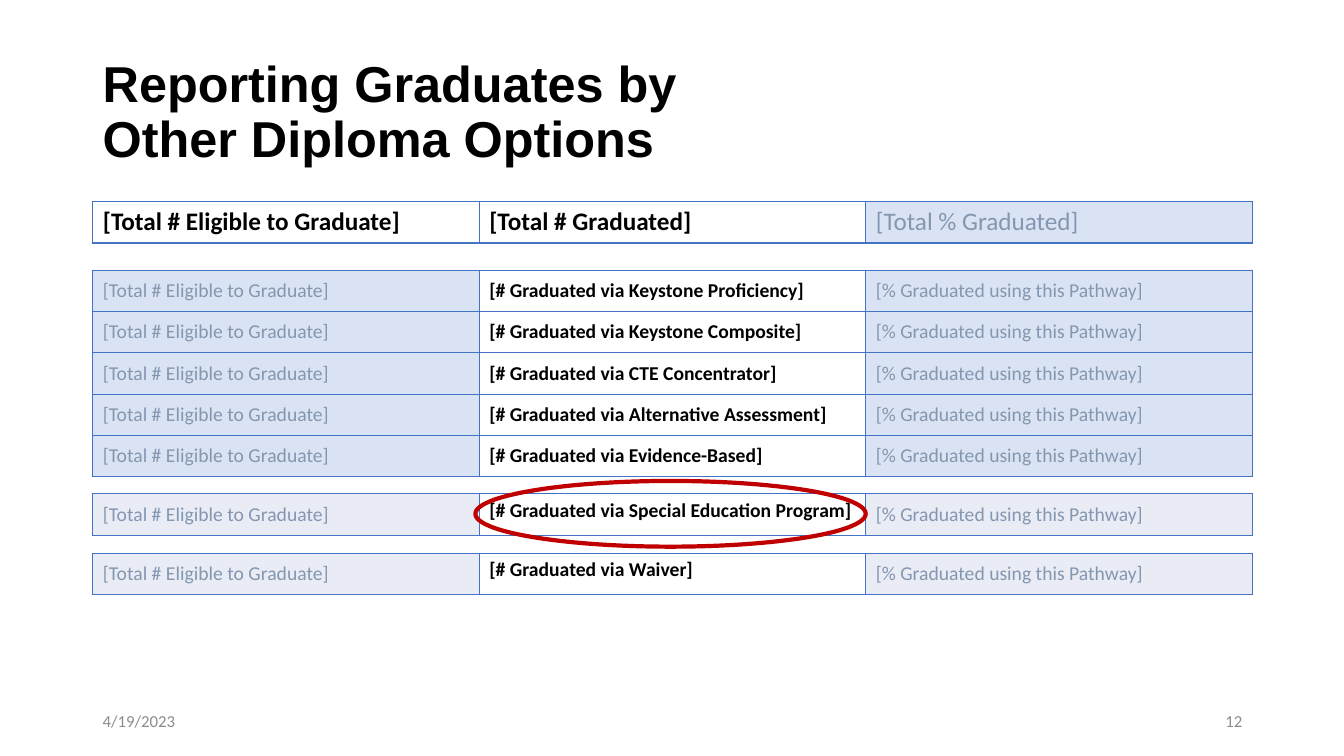
from lxml.etree import SubElement
from pptx import Presentation
from pptx.dml.color import RGBColor
from pptx.enum.shapes import MSO_SHAPE as Shape
from pptx.enum.text import MSO_ANCHOR as Anchor, PP_ALIGN as Align
from pptx.oxml.ns import qn
from pptx.util import Inches, Pt

BLACK = RGBColor(0x00, 0x00, 0x00)
WHITE = RGBColor(0xFF, 0xFF, 0xFF)
MUTED = RGBColor(0x84, 0x97, 0xB0)
FOOTER_GRAY = RGBColor(0x8C, 0x8C, 0x8C)
BORDER_BLUE = RGBColor(0x44, 0x72, 0xC4)
PALE_BLUE = RGBColor(0xDA, 0xE3, 0xF3)
PALE_GRAY = RGBColor(0xE9, 0xEB, 0xF5)
RED = RGBColor(0xC0, 0x00, 0x00)

ELIGIBLE = "[Total # Eligible to Graduate]"
PATHWAY_SHARE = "[% Graduated using this Pathway]"


class GridPage:
    """Places elements by columns and rows, counted from the first table's corner."""

    left, top = 0.92, 2.0
    column, row = 11.5 / 3, 0.41

    def __init__(self, deck):
        self.page = deck.slides.add_slide(deck.slide_layouts[6])

    def area(self, column, row, columns, rows):
        return (Inches(self.left + column * self.column),
                Inches(self.top + row * self.row),
                Inches(columns * self.column), Inches(rows * self.row))

    def fill_para(self, para, text, color, size, name="Calibri", bold=False):
        para.text = text
        style = {"name": name, "size": Pt(size), "bold": bold}
        for span in para.runs:
            for key, value in style.items():
                setattr(span.font, key, value)
            span.font.color.rgb = color

    def text(self, place, text, color, size, align=Align.LEFT, spacing=1.0, **style):
        frame = self.page.shapes.add_textbox(*self.area(*place)).text_frame
        frame.word_wrap = True
        frame.vertical_anchor = Anchor.MIDDLE
        para = frame.paragraphs[0]
        para.alignment = align
        para.line_spacing = spacing
        self.fill_para(para, text, color, size, **style)

    def border(self, cell):
        properties = cell._tc.get_or_add_tcPr()
        for side in ("lnL", "lnR", "lnT", "lnB"):
            line = SubElement(properties, qn(f"a:{side}"), w=str(Pt(1)))
            fill = SubElement(line, qn("a:solidFill"))
            SubElement(fill, qn("a:srgbClr"), val=str(BORDER_BLUE))

    def table(self, row, lines, shade, active=(1,), size=14, anchors=(Anchor.MIDDLE,) * 3):
        """Active columns are bold on white; the others are muted on the shade."""
        place = self.area(0, row, 3, len(lines))
        table = self.page.shapes.add_table(len(lines), 3, *place).table
        table.first_row = table.horz_banding = False
        for table_row, line in zip(table.rows, lines):
            for index, (cell, text) in enumerate(zip(table_row.cells, line)):
                on = index in active
                self.border(cell)
                cell.fill.solid()
                cell.fill.fore_color.rgb = WHITE if on else shade
                cell.vertical_anchor = anchors[index]
                self.fill_para(cell.text_frame.paragraphs[0], text,
                               BLACK if on else MUTED, size, bold=on)

    def ring(self, place, color, width):
        ring = self.page.shapes.add_shape(Shape.OVAL, *self.area(*place))
        ring.shadow.inherit = False
        ring.fill.background()
        ring.line.color.rgb = color
        ring.line.width = Pt(width)


def pathways(*names):
    return [(ELIGIBLE, f"[# Graduated via {name}]", PATHWAY_SHARE) for name in names]


def main():
    deck = Presentation()
    deck.slide_width, deck.slide_height = Inches(13.33), Inches(7.5)
    grid = GridPage(deck)

    grid.text((0, -3.9, 3, 3.54), "Reporting Graduates by\vOther Diploma Options",
              BLACK, 36, spacing=0.9, name="Arial", bold=True)

    totals = [(ELIGIBLE, "[Total # Graduated]", "[Total % Graduated]")]
    grid.table(0, totals, PALE_BLUE, active=(0, 1), size=18, anchors=(Anchor.TOP,) * 3)
    grid.table(1.66, pathways("Keystone Proficiency", "Keystone Composite",
                              "CTE Concentrator", "Alternative Assessment",
                              "Evidence-Based"), PALE_BLUE)
    raised = (Anchor.MIDDLE, Anchor.TOP, Anchor.MIDDLE)
    for row, name in ((7.07, "Special Education Program"), (8.51, "Waiver")):
        grid.table(row, pathways(name), PALE_GRAY, anchors=raised)
    grid.ring((0.99, 6.76, 1.01, 1.59), RED, 3)

    for column, text, align in ((0, "4/19/2023", Align.LEFT), (2.22, "12", Align.RIGHT)):
        grid.text((column, 12.07, 0.78, 0.98), text, FOOTER_GRAY, 12, align=align)

    deck.save("out.pptx")


if __name__ == "__main__":
    main()
